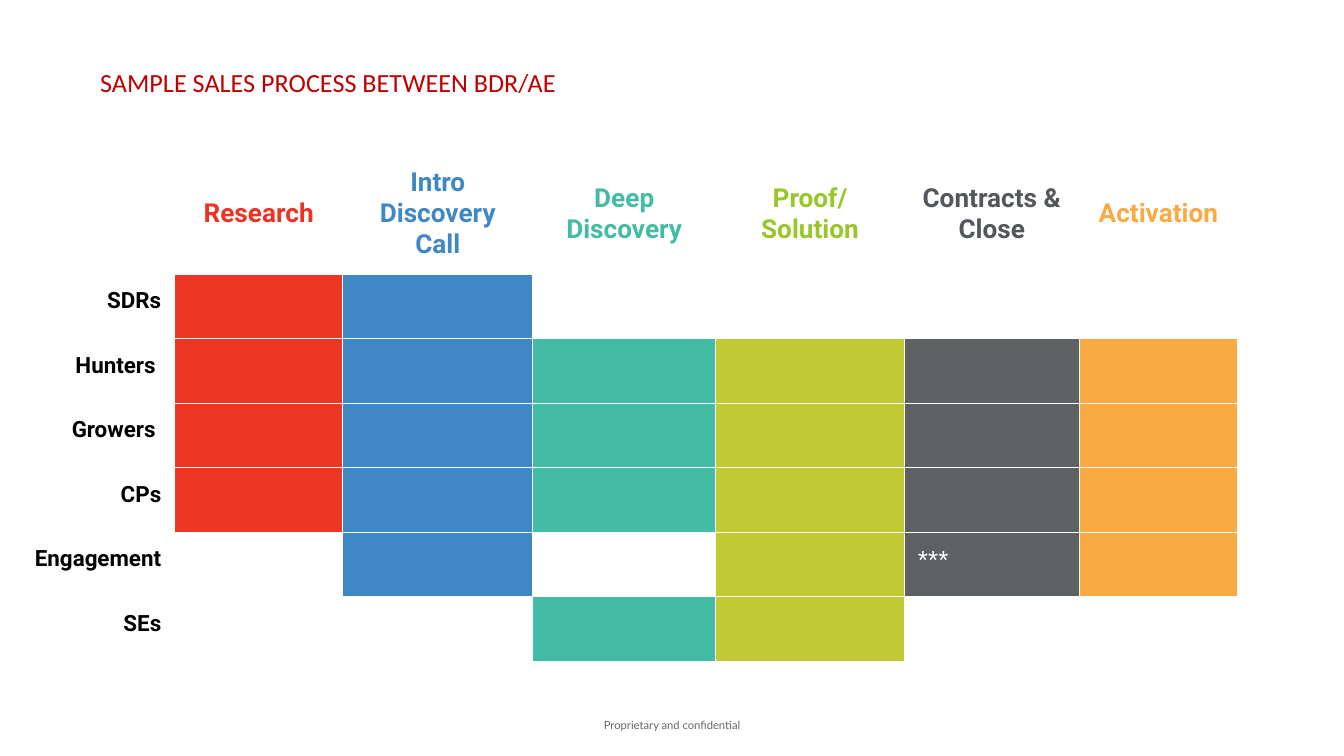
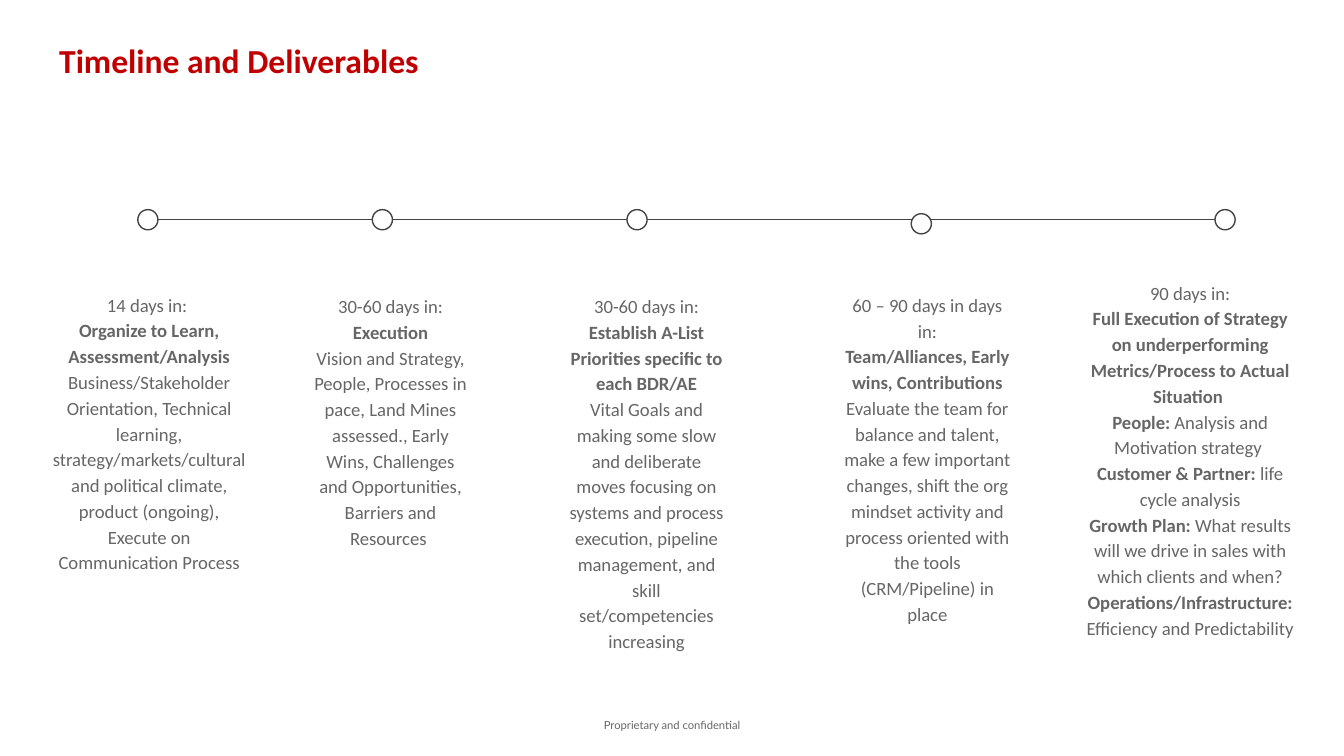
from dataclasses import dataclass

from lxml.etree import SubElement
from pptx import Presentation
from pptx.dml.color import RGBColor
from pptx.enum.shapes import MSO_CONNECTOR as Connector, MSO_SHAPE as Shape
from pptx.enum.text import MSO_ANCHOR as Anchor, MSO_AUTO_SIZE as AutoSize, PP_ALIGN as Align
from pptx.oxml.ns import qn
from pptx.util import Emu, Pt

PX = 4572
SLIDE_WIDTH, SLIDE_HEIGHT = 2000, 1125
COLORS = {
    "white": "FFFFFF", "black": "000000", "title": "C00000", "body": "666666", "line": "434343",
    "research": "EE3324", "research_bar": "EE3625", "blue": "3F88C5", "teal": "44BBA4",
    "proof": "99C62A", "proof_bar": "C0CA33", "contracts": "53565B", "contracts_bar": "5E6163",
    "orange": "FAAA42",
}
INSET = 20
LABEL_WIDTH, HEADER_HEIGHT, ROW_HEIGHT = 235, 179, 96
DOT_SIZE = 30
AXIS_START, AXIS_END, AXIS_Y = 216, 1814, 327


@dataclass(frozen=True)
class Box:
    left: int
    top: int
    width: int
    height: int

    def emu(self) -> tuple[Emu, ...]:
        return tuple(px(v) for v in (self.left, self.top, self.width, self.height))


@dataclass(frozen=True)
class Stage:
    name: str
    width: int
    header: str
    bar: str


@dataclass(frozen=True)
class Team:
    name: str
    stages: tuple[int, ...]


@dataclass(frozen=True)
class Milestone:
    dot_left: int
    dot_top: int
    box: Box
    when: str
    goal: str
    details: tuple[tuple[str, str], ...]


STAGES = (
    Stage("Research", 250, "research", "research_bar"),
    Stage("Intro Discovery Call", 283, "blue", "blue"),
    Stage("Deep Discovery", 272, "teal", "teal"),
    Stage("Proof/Solution", 281, "proof", "proof_bar"),
    Stage("Contracts & Close", 260, "contracts", "contracts_bar"),
    Stage("Activation", 236, "orange", "orange"),
)
ALL_STAGES = tuple(range(len(STAGES)))
TEAMS = (
    Team("SDRs", (0, 1)),
    Team("Hunters ", ALL_STAGES),
    Team("Growers ", ALL_STAGES),
    Team("CPs", ALL_STAGES),
    Team("Engagement", (1, 3, 4, 5)),
    Team("SEs", (2, 3)),
)
CELL_NOTES = {("Engagement", "Contracts & Close"): "***"}

MILESTONES = (
    Milestone(205, 312, Box(56, 412, 332, 634), "14 days in: ",
              "Organize to Learn, Assessment/Analysis",
              (("", "Business/Stakeholder Orientation, Technical learning, "
                    "strategy/markets/cultural and political climate, product (ongoing), "
                    "Execute on Communication Process"),)),
    Milestone(554, 312, Box(443, 414, 276, 486), "30-60 days in:", "Execution",
              (("", "Vision and Strategy, People, Processes in pace, Land Mines assessed., "
                    "Early Wins, Challenges and Opportunities, Barriers and Resources "),)),
    Milestone(933, 312, Box(824, 414, 276, 548), "30-60 days in:",
              "Establish A-List Priorities specific to each BDR/AE",
              (("", "Vital Goals and making some slow and deliberate moves focusing on systems "
                    "and process execution, pipeline management, and skill set/competencies "
                    "increasing"),)),
    Milestone(1356, 318, Box(1233, 412, 294, 530), "60 – 90 days in days in:",
              "Team/Alliances, Early wins, Contributions",
              (("", "Evaluate the team for balance and talent, make a few important changes, "
                    "shift the org mindset activity and process oriented with the tools "
                    "(CRM/Pipeline) in place"),)),
    Milestone(1808, 312, Box(1597, 394, 348, 656), "90 days in:",
              "Full Execution of Strategy on underperforming Metrics/Process to Actual Situation ",
              (("People:", " Analysis and Motivation strategy "),
               ("Customer & Partner:", " life cycle analysis"),
               ("Growth Plan: ", "What results will we drive in sales with which clients and when?"),
               ("Operations/Infrastructure: ", "Efficiency and Predictability"))),
)


def px(value: int) -> Emu:
    return Emu(value * PX)


def rgb(name: str) -> RGBColor:
    return RGBColor.from_string(COLORS[name])


def style(paragraph, font_name: str, size: int, color: str, bold: bool | None = False,
          align=Align.LEFT) -> None:
    paragraph.alignment = align
    font = paragraph.font
    font.name, font.size = font_name, Pt(size)
    font.color.rgb = rgb(color)
    if bold is not None:
        font.bold = bold


def set_margins(target, horizontal: int = INSET, vertical: int = INSET) -> None:
    target.margin_left = target.margin_right = px(horizontal)
    target.margin_top = target.margin_bottom = px(vertical)


def add_text_frame(slide, box: Box, anchor=Anchor.TOP):
    frame = slide.shapes.add_textbox(*box.emu()).text_frame
    frame.word_wrap = True
    frame.vertical_anchor = anchor
    set_margins(frame)
    return frame


def add_titled_slide(deck, title: str, box: Box, size: int, bold: bool, anchor, vertical: int):
    slide = deck.slides.add_slide(deck.slide_layouts[5])
    heading = slide.shapes.title
    heading.left, heading.top, heading.width, heading.height = box.emu()
    frame = heading.text_frame
    frame.text = title
    frame.word_wrap = True
    frame.auto_size = AutoSize.NONE
    frame.vertical_anchor = anchor
    set_margins(frame, vertical=vertical)
    style(frame.paragraphs[0], "Calibri", size, "title", bold)

    footer = add_text_frame(slide, Box(731, 1030, 538, 94), Anchor.MIDDLE).paragraphs[0]
    footer.text = "Proprietary and confidential"
    footer.line_spacing = 1.15
    style(footer, "Lato", 6, "body", align=Align.CENTER)
    return slide


def add_borders(cell) -> None:
    properties = cell._tc.get_or_add_tcPr()
    for side in ("a:lnL", "a:lnR", "a:lnT", "a:lnB"):
        border = SubElement(properties, qn(side), w=str(Pt(0.75)))
        fill = SubElement(border, qn("a:solidFill"))
        SubElement(fill, qn("a:srgbClr"), val=COLORS["white"])


def fill_cell(cell, bar: str | None = None) -> None:
    add_borders(cell)
    if bar:
        cell.fill.solid()
        cell.fill.fore_color.rgb = rgb(bar)
    else:
        cell.fill.background()


def write_cell(cell, text: str, font_name: str, size: int, color: str, bold: bool = True,
               align=Align.LEFT, anchor=Anchor.TOP) -> None:
    cell.text = text
    cell.vertical_anchor = anchor
    set_margins(cell)
    style(cell.text_frame.paragraphs[0], font_name, size, color, bold, align)


def add_process_table(slide) -> None:
    widths = (LABEL_WIDTH, *(stage.width for stage in STAGES))
    heights = (HEADER_HEIGHT, *(ROW_HEIGHT for _ in TEAMS))
    box = Box(25, 228, sum(widths), sum(heights))
    table = slide.shapes.add_table(len(heights), len(widths), *box.emu()).table
    table.first_row = table.horz_banding = False
    for column, width in zip(table.columns, widths):
        column.width = px(width)
    for row, height in zip(table.rows, heights):
        row.height = px(height)

    fill_cell(table.cell(0, 0))
    for c, stage in enumerate(STAGES, 1):
        header = table.cell(0, c)
        fill_cell(header)
        write_cell(header, stage.name, "Roboto", 14, stage.header,
                   align=Align.CENTER, anchor=Anchor.MIDDLE)
    for r, team in enumerate(TEAMS, 1):
        label = table.cell(r, 0)
        fill_cell(label)
        write_cell(label, team.name, "Roboto", 12, "black", align=Align.RIGHT)
        for c, stage in enumerate(STAGES):
            cell = table.cell(r, c + 1)
            fill_cell(cell, stage.bar if c in team.stages else None)
            note = CELL_NOTES.get((team.name, stage.name))
            if note:
                write_cell(cell, note, "Arial", 14, "white", bold=False)


def add_timeline(slide) -> None:
    axis = slide.shapes.add_connector(
        Connector.STRAIGHT, px(AXIS_START), px(AXIS_Y), px(AXIS_END), px(AXIS_Y))
    axis.line.color.rgb = rgb("line")
    axis.line.width = Pt(0.75)
    SubElement(axis._element.spPr, qn("a:effectLst"))
    for milestone in MILESTONES:
        add_milestone(slide, milestone)


def add_milestone(slide, milestone: Milestone) -> None:
    dot_box = Box(milestone.dot_left, milestone.dot_top, DOT_SIZE, DOT_SIZE)
    dot = slide.shapes.add_shape(Shape.OVAL, *dot_box.emu())
    dot.shadow.inherit = False
    dot.fill.solid()
    dot.fill.fore_color.rgb = rgb("white")
    dot.line.color.rgb = rgb("line")
    dot.line.width = Pt(0.75)

    frame = add_text_frame(slide, milestone.box)
    entries = (("", milestone.when), (milestone.goal, ""), *milestone.details)
    for i, (strong, plain) in enumerate(entries):
        paragraph = frame.paragraphs[0] if i == 0 else frame.add_paragraph()
        paragraph.line_spacing = 1.15
        mixed = bool(strong and plain)
        style(paragraph, "Calibri", 10, "body", None if mixed else bool(strong), Align.CENTER)
        for text, bold in ((strong, True), (plain, False)):
            if text:
                run = paragraph.add_run()
                run.text = text
                if mixed:
                    run.font.bold = bold


def main() -> None:
    deck = Presentation()
    deck.slide_width, deck.slide_height = px(SLIDE_WIDTH), px(SLIDE_HEIGHT)
    process = add_titled_slide(deck, "SAMPLE SALES PROCESS BETWEEN BDR/AE",
                               Box(129, 88, 916, 68), 14, False, Anchor.TOP, 10)
    add_process_table(process)
    timeline = add_titled_slide(deck, "Timeline and Deliverables",
                                Box(68, 46, 1864, 86), 18, True, Anchor.MIDDLE, INSET)
    add_timeline(timeline)
    deck.save("out.pptx")


if __name__ == "__main__":
    main()
